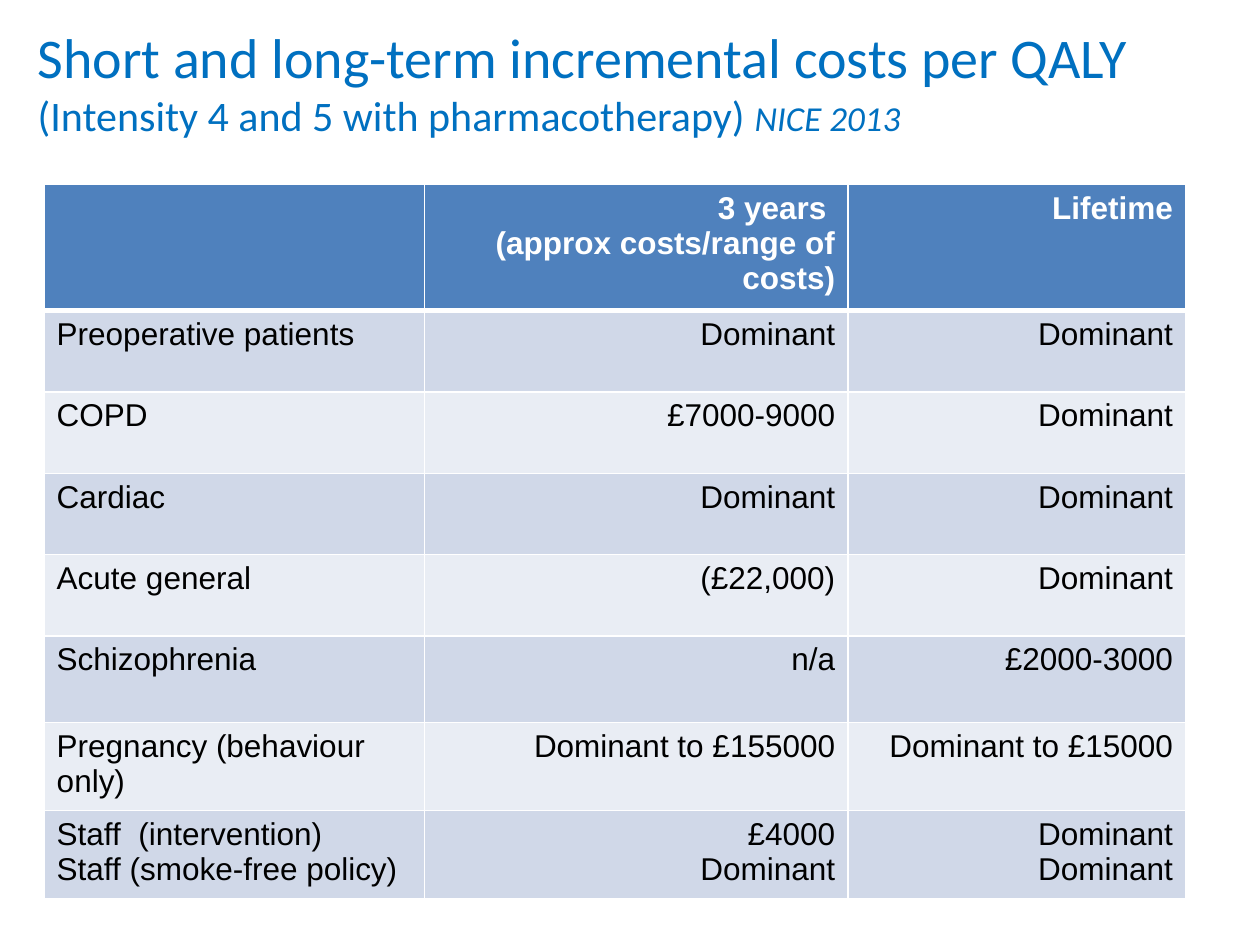
from dataclasses import dataclass

from lxml import etree
from pptx import Presentation
from pptx import util as u
from pptx.dml import color
from pptx.enum import text
from pptx.oxml import ns


@dataclass(frozen=True)
class Theme:
    """Colours, fonts and type sizes of the slide."""
    title: str = "0070C0"
    header: str = "4F81BD"
    bands: tuple = ("D0D8E8", "E9EDF4")
    white: str = "FFFFFF"
    black: str = "000000"
    title_font: str = "Calibri"
    table_font: str = "Arial"
    title_size: int = 32
    subtitle_size: int = 24
    source_size: int = 20
    table_size: int = 18


THEME = Theme()
COLUMN_WIDTHS = (7.67, 8.53, 6.81)
ROW_HEIGHTS = (2.4, 1.64, 1.64, 1.64, 1.64, 1.74, 1.68, 1.68)
ROWS = (
    ("", "3 years \n(approx costs/range of costs)", "Lifetime"),
    ("Preoperative patients", "Dominant", "Dominant"),
    ("COPD", "£7000-9000", "Dominant"),
    ("Cardiac", "Dominant", "Dominant"),
    ("Acute general", "(£22,000)", "Dominant"),
    ("Schizophrenia", "n/a", "£2000-3000"),
    ("Pregnancy (behaviour only)", "Dominant to £155000", "Dominant to £15000"),
    ("Staff  (intervention)\nStaff (smoke-free policy)", "£4000\nDominant", "Dominant\nDominant"),
)


def format_font(font, name, size, rgb, bold=False, italic=False):
    """Apply typeface, size, colour and style to a font."""
    font.name, font.size = name, u.Pt(size)
    font.bold, font.italic = bold, italic
    font.color.rgb = color.RGBColor.from_string(rgb)


def add_title(s):
    """Add the two-line title with its italic source."""
    tf = s.shapes.add_textbox(u.Cm(0.51), u.Cm(0.33), u.Cm(24.89), u.Cm(2.7)).text_frame
    tf.word_wrap = True
    tf.text = ("Short and long-term incremental costs per QALY\n"
               "(Intensity 4 and 5 with pharmacotherapy) ")
    heading, subtitle = tf.paragraphs
    source = subtitle.add_run()
    source.text = "NICE 2013"
    sizes = ((heading.runs[0], THEME.title_size), (subtitle.runs[0], THEME.subtitle_size),
             (source, THEME.source_size))
    for r, size in sizes:
        format_font(r.font, THEME.title_font, size, THEME.title, italic=r is source)


def set_borders(cell, top, bottom):
    """Draw white cell borders, with top and bottom widths in points."""
    tc_pr = cell._tc.get_or_add_tcPr()
    for side, width in (("L", 1), ("R", 1), ("T", top), ("B", bottom)):
        ln = etree.SubElement(tc_pr, ns.qn(f"a:ln{side}"), w=str(u.Pt(width)))
        fill = etree.SubElement(ln, ns.qn("a:solidFill"))
        etree.SubElement(fill, ns.qn("a:srgbClr"), val=THEME.white)


def fill_cell(cell, content, row, column):
    """Write and style one table cell."""
    is_header = row == 0
    set_borders(cell, top=3 if row == 1 else 1, bottom=3 if is_header else 1)
    cell.fill.solid()
    rgb = THEME.header if is_header else THEME.bands[(row - 1) % 2]
    cell.fill.fore_color.rgb = color.RGBColor.from_string(rgb)
    cell.text_frame.text = content
    ink = THEME.white if is_header else THEME.black
    for p in cell.text_frame.paragraphs:
        p.alignment = text.PP_ALIGN.RIGHT if column else text.PP_ALIGN.LEFT
        for r in p.runs:
            format_font(r.font, THEME.table_font, THEME.table_size, ink, bold=is_header)


def add_cost_table(s):
    """Add the table of costs by patient group."""
    table = s.shapes.add_table(len(ROWS), len(COLUMN_WIDTHS), u.Cm(0.89), u.Cm(3.72),
                               u.Cm(sum(COLUMN_WIDTHS)), u.Cm(sum(ROW_HEIGHTS))).table
    for column, width in zip(table.columns, COLUMN_WIDTHS):
        column.width = u.Cm(width)
    for i, (values, height) in enumerate(zip(ROWS, ROW_HEIGHTS)):
        table.rows[i].height = u.Cm(height)
        for j, content in enumerate(values):
            fill_cell(table.cell(i, j), content, i, j)


def main():
    """Build and save the slide."""
    prs = Presentation()
    prs.slide_width, prs.slide_height = u.Cm(25.4), u.Cm(19.05)
    s = prs.slides.add_slide(prs.slide_layouts[6])
    add_title(s)
    add_cost_table(s)
    prs.save("out.pptx")


if __name__ == "__main__":
    main()
